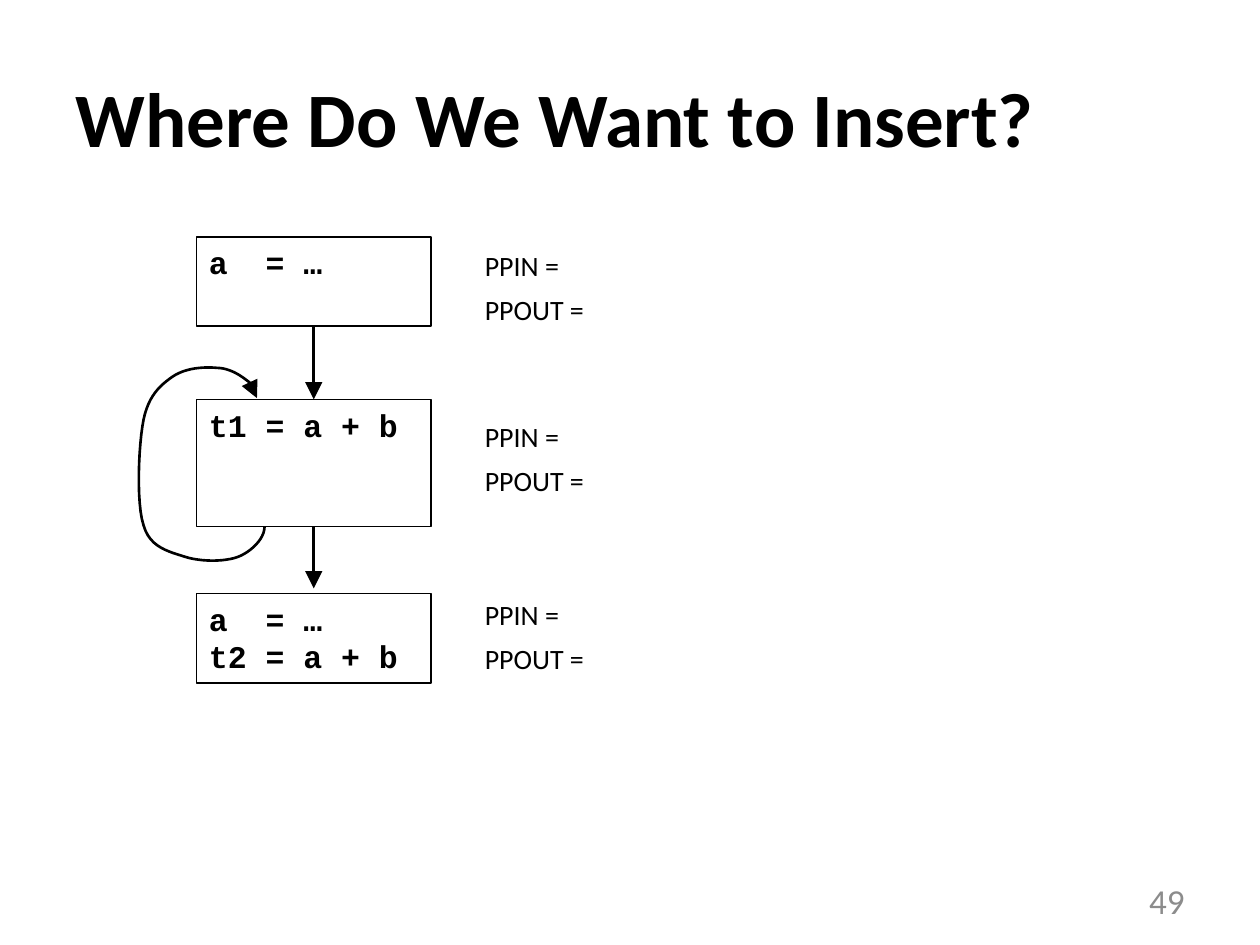
from lxml import etree
from pptx import Presentation
from pptx.dml.color import RGBColor
from pptx.enum.shapes import MSO_CONNECTOR, MSO_SHAPE
from pptx.enum.text import MSO_ANCHOR, PP_ALIGN
from pptx.oxml.ns import qn
from pptx.util import Inches, Pt

STRAIGHT = MSO_CONNECTOR.STRAIGHT
RECT = MSO_SHAPE.RECTANGLE
TOP, MIDDLE = MSO_ANCHOR.TOP, MSO_ANCHOR.MIDDLE
LEFT, RIGHT = PP_ALIGN.LEFT, PP_ALIGN.RIGHT

COLORS = {"ink": "000000", "number": "8C8C8C"}
SANS, MONO = "Calibri", "Courier New"
TITLE = "Where Do We Want to Insert?"
NUMBER = "49"
LABELS = ["PPIN =", "PPOUT ="]
BLOCKS = [
    (["a  = …"], 1.88, 0.71, 1.92),
    (["t1 = a + b"], 3.17, 1.01, 3.28),
    (["a  = …", "t2 = a + b"], 4.71, 0.71, 4.69),
]
BLOCK_X, BLOCK_W = 1.56, 1.86
LABEL_X, LABEL_W, LABEL_H = 3.75, 1, 0.72
EXIT_END = 4.67
LOOP_START = (2.1, 4.18)
LOOP = [
    ((2.1, 4.28), (1.99, 4.38), (1.89, 4.42)),
    ((1.78, 4.46), (1.6, 4.46), (1.47, 4.42)),
    ((1.35, 4.38), (1.19, 4.35), (1.14, 4.17)),
    ((1.08, 3.99), (1.1, 3.53), (1.14, 3.33)),
    ((1.18, 3.14), (1.27, 3.06), (1.37, 2.99)),
    ((1.47, 2.92), (1.62, 2.91), (1.72, 2.92)),
    ((1.82, 2.92), (1.91, 2.98), (1.96, 3.02)),
    ((2.02, 3.06), (2.03, 3.11), (2.04, 3.16)),
]
STEPS = 12


def color(name):
    return RGBColor.from_string(COLORS[name])


def write(sp, lines, size, font, ink="ink", bold=False, anchor=TOP,
          align=LEFT, before=0, wrap=False):
    tf = sp.text_frame
    tf.word_wrap = wrap
    tf.vertical_anchor = anchor
    for i, line in enumerate(lines):
        p = tf.add_paragraph() if i else tf.paragraphs[0]
        p.alignment = align
        p.space_before = Pt(before)
        r = p.add_run()
        r.text = line
        r.font.size = Pt(size)
        r.font.name = font
        r.font.bold = bold
        r.font.color.rgb = color(ink)


def add_text(s, box, lines, size, **style):
    sp = s.shapes.add_textbox(*map(Inches, box))
    write(sp, lines, size, SANS, **style)


def add_block(s, lines, y, h):
    sp = s.shapes.add_shape(RECT, *map(Inches, (BLOCK_X, y, BLOCK_W, h)))
    sp.shadow.inherit = False
    sp.fill.background()
    sp.line.color.rgb = color("ink")
    sp.line.width = Pt(1)
    write(sp, lines, 18, MONO, bold=True)
    return sp


def style_arrow(sp):
    sp.line.color.rgb = color("ink")
    sp.line.width = Pt(1.5)
    ln = sp.line._get_or_add_ln()
    etree.SubElement(ln, qn("a:tailEnd"), type="triangle", w="lg", len="lg")


def add_arrow(s, start, end_y, target=None):
    x = start.left + start.width // 2
    cx = s.shapes.add_connector(STRAIGHT, x, start.top + start.height, x, end_y)
    cx.begin_connect(start, 2)
    if target is not None:
        cx.end_connect(target, 0)
    style_arrow(cx)
    etree.SubElement(cx._element.spPr, qn("a:effectLst"))


def bezier(a, b, c, d, t):
    u = 1 - t
    return tuple(Inches(u**3 * i + 3 * u * u * t * j + 3 * u * t * t * k + t**3 * m)
                 for i, j, k, m in zip(a, b, c, d))


def add_loop(s):
    points, start = [], LOOP_START
    for b, c, d in LOOP:
        points += [bezier(start, b, c, d, n / STEPS) for n in range(1, STEPS + 1)]
        start = d
    builder = s.shapes.build_freeform(*map(Inches, LOOP_START))
    builder.add_line_segments(points, close=False)
    sp = builder.convert_to_shape()
    sp.shadow.inherit = False
    sp.fill.background()
    style_arrow(sp)


def main():
    prs = Presentation()
    prs.slide_width, prs.slide_height = Inches(10), Inches(7.5)
    s = prs.slides.add_slide(prs.slide_layouts[6])
    add_text(s, (0.5, 0.3, 9, 1.25), [TITLE], 44, bold=True, anchor=MIDDLE, wrap=True)
    add_text(s, (7.17, 6.95, 2.33, 0.4), [NUMBER], 20, ink="number",
             anchor=MIDDLE, align=RIGHT, wrap=True)
    entry, body, _ = [add_block(s, lines, y, h) for lines, y, h, _ in BLOCKS]
    add_arrow(s, entry, body.top, body)
    add_arrow(s, body, Inches(EXIT_END))
    add_loop(s)
    for *_, y in BLOCKS:
        add_text(s, (LABEL_X, y, LABEL_W, LABEL_H), LABELS, 16, before=6)
    prs.save("out.pptx")


if __name__ == "__main__":
    main()
